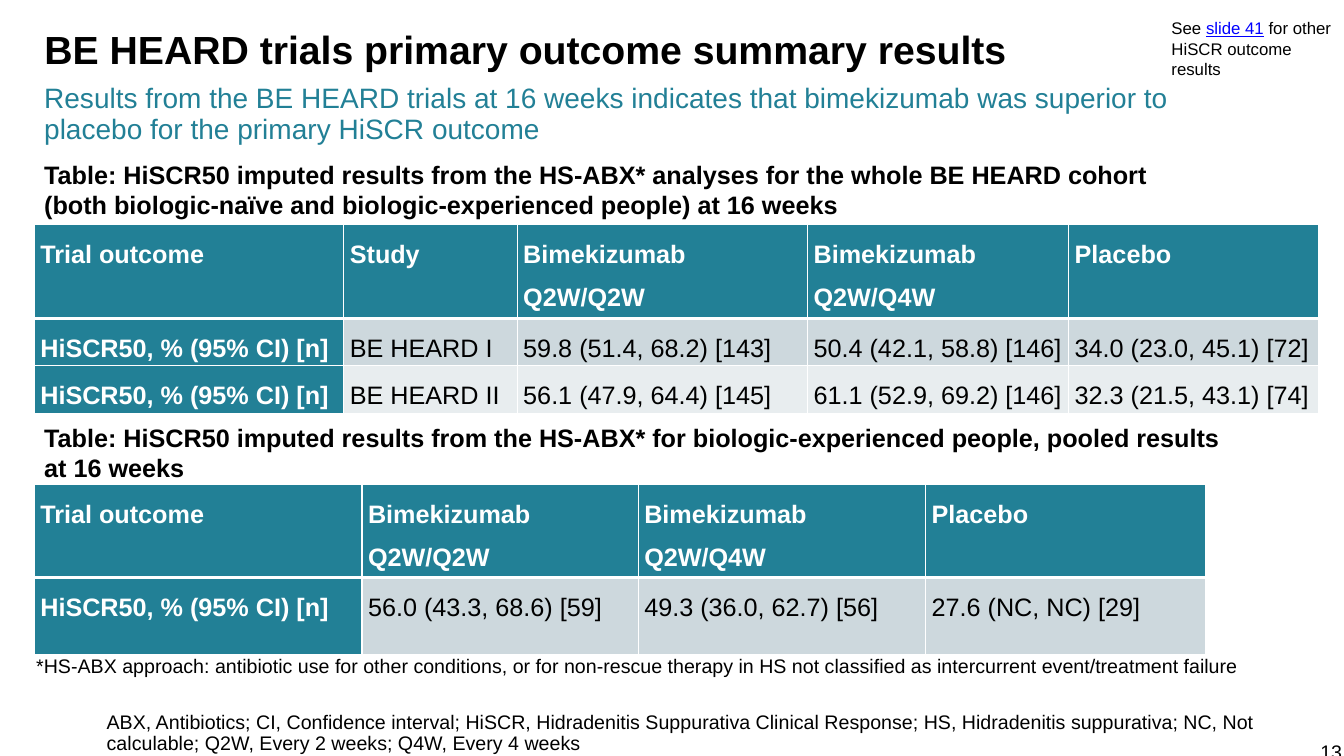
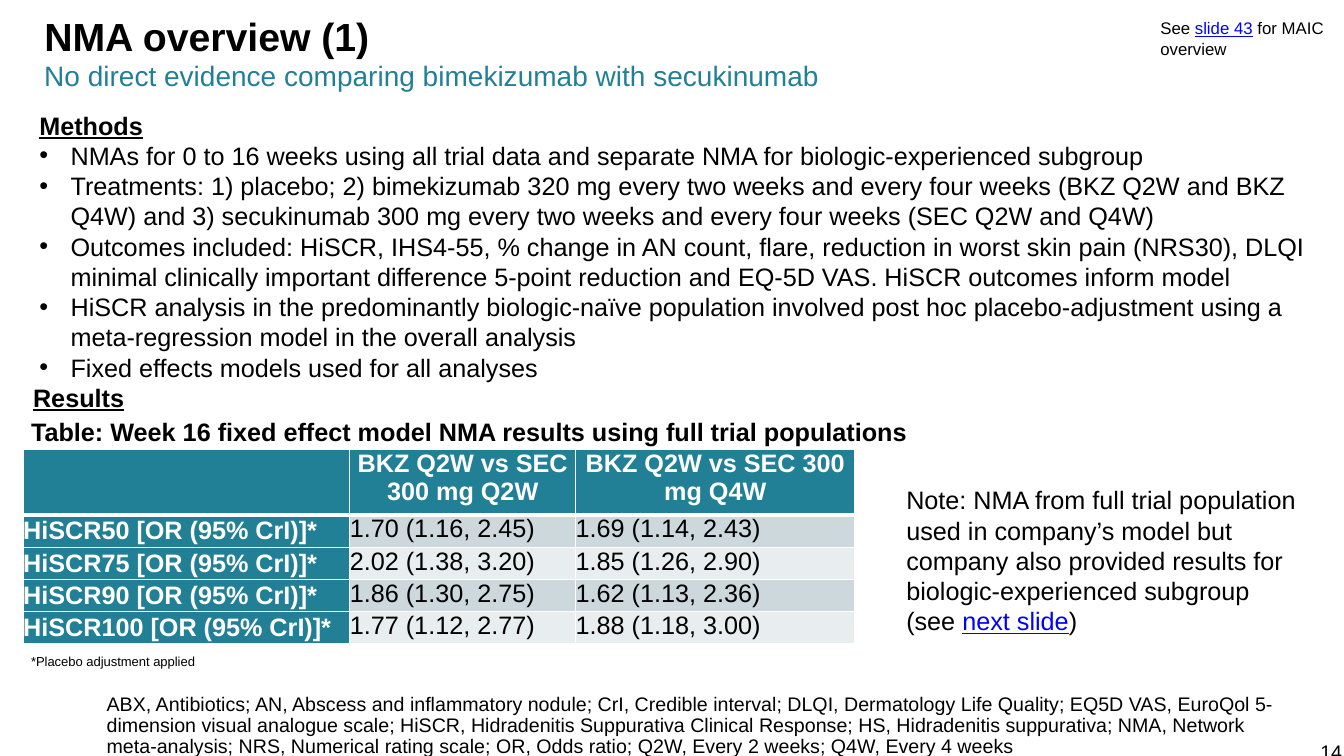
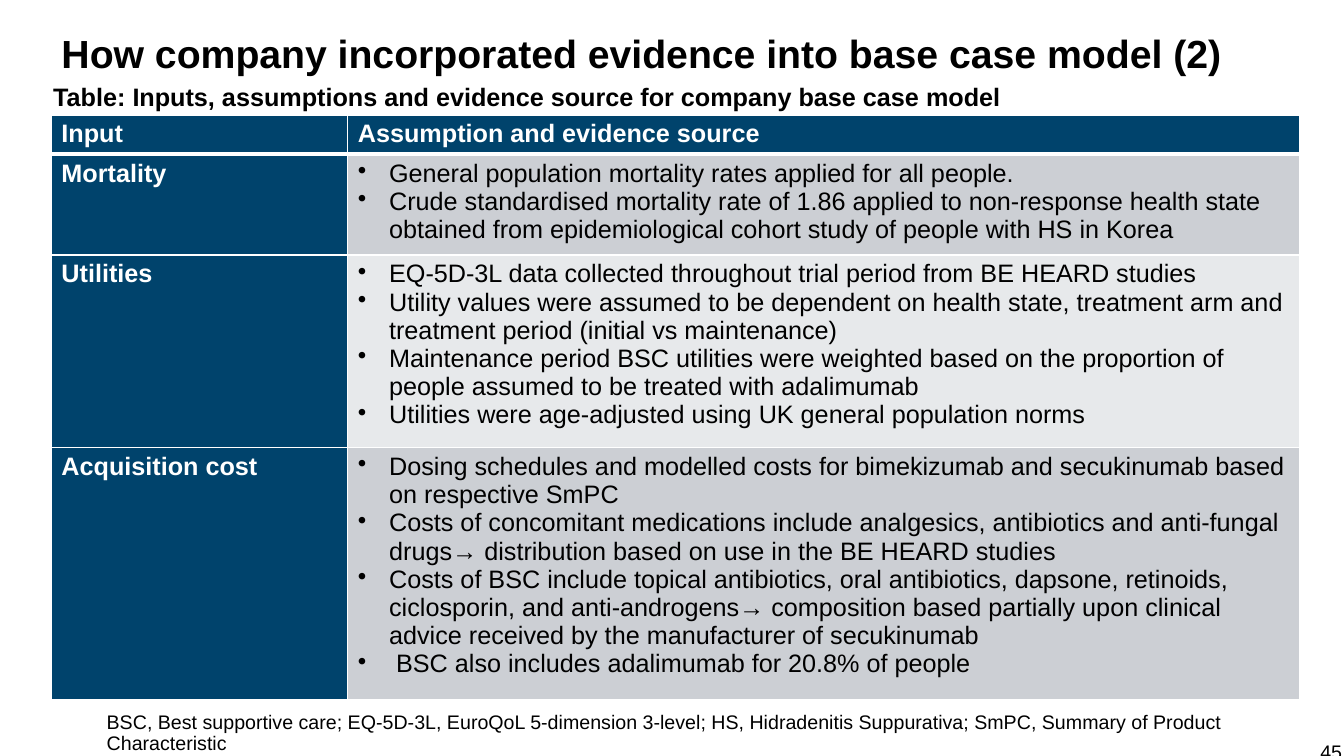
from lxml import etree
from pptx import Presentation, util as u
from pptx.dml.color import RGBColor
from pptx.enum import text
from pptx.oxml.ns import qn

TEAL, NAVY, WHITE, BLACK, LINK = "228096", "00436C", "FFFFFF", "000000", "0000FF"
TEAL_BANDS = ("CDD8DD", "E8EDEF")
NAVY_BANDS = ("CCCFD4", "E7E9EB")
BASE = dict(name="Arial", size=u.Pt(18), bold=False, underline=False, color=BLACK)
LINKED = dict(color=LINK, underline=True)
HEADING = dict(bold=True, underline=True)
INDENT = u.Inches(0.31)
FOOTNOTE = dict(line_spacing=0.9, size=u.Pt(14))
LEFT = 0.34


def rgb(color):
    return RGBColor.from_string(color)


def style(font, fmt):
    for key, value in fmt.items():
        if key == "color":
            font.color.rgb = rgb(value)
        else:
            setattr(font, key, value)


def set_bullet(p, on):
    pPr = p._p.get_or_add_pPr()
    pPr.set("marL", str(INDENT if on else 0))
    pPr.set("indent", str(-INDENT if on else 0))
    if on:
        etree.SubElement(pPr, qn("a:buChar")).set("char", "•")
    else:
        etree.SubElement(pPr, qn("a:buNone"))


def write(tf, paras, bullets_from=None, align=text.PP_ALIGN.LEFT,
          line_spacing=1.0, space_after=0, **fmt):
    """Fill a frame; a paragraph is a string or a list of strings and (string, format) pairs."""
    for i, parts in enumerate(paras):
        p = tf.paragraphs[0] if i == 0 else tf.add_paragraph()
        p.alignment, p.line_spacing = align, line_spacing
        p.space_before, p.space_after = u.Pt(0), u.Pt(space_after)
        set_bullet(p, bullets_from is not None and i >= bullets_from)
        for part in [parts] if isinstance(parts, str) else parts:
            words, extra = (part, {}) if isinstance(part, str) else part
            r = p.add_run()
            r.text = words
            style(r.font, {**BASE, **fmt, **extra})


def place(sp, box, paras, anchor=text.MSO_ANCHOR.TOP, **fmt):
    sp.left, sp.top, sp.width, sp.height = map(u.Inches, box)
    tf = sp.text_frame
    tf.word_wrap, tf.auto_size = True, text.MSO_AUTO_SIZE.NONE
    tf.vertical_anchor = anchor
    write(tf, paras, **fmt)
    return sp


def add_text(s, box, *paras, **fmt):
    return place(s.shapes.add_textbox(0, 0, 0, 0), box, paras, **fmt)


def add_slide(prs, layout, title, title_box, number, footnote, footnote_top=7.02):
    """Slide with the shared title, page number and abbreviations line."""
    s = prs.slides.add_slide(prs.slide_layouts[layout])
    place(s.shapes.title, title_box, [title], line_spacing=0.9, size=u.Pt(28), bold=True)
    add_text(s, (12.9, 7.26, 0.51, 0.4), number, size=u.Pt(14),
             align=text.PP_ALIGN.RIGHT, anchor=text.MSO_ANCHOR.MIDDLE)
    add_text(s, (0.96, footnote_top, 11.86, 7.5 - footnote_top), footnote, **FOOTNOTE)
    return s


def add_subtitle(s, top, words):
    add_text(s, (LEFT, top, 12.3, 0.65), words, line_spacing=0.9, size=u.Pt(20), color=TEAL)


def add_see_note(s, left, target, rest):
    add_text(s, (left, 0.13, 1.88, 0.71), ["See ", (target, LINKED), rest], size=u.Pt(12))


def add_border(cell, side, width):
    ln = etree.SubElement(cell._tc.get_or_add_tcPr(), qn("a:ln" + side))
    ln.set("w", str(u.Pt(width)))
    fill = etree.SubElement(ln, qn("a:solidFill"))
    etree.SubElement(fill, qn("a:srgbClr")).set("val", WHITE)


def add_table(s, left, top, widths, heights, rows, dark=TEAL, bands=TEAL_BANDS,
              inset=(0.06, 0.02), head_align=text.PP_ALIGN.LEFT, label_anchor=text.MSO_ANCHOR.TOP,
              bulleted=False, **fmt):
    """Table with a dark header row and label column; a list in a cell holds its paragraphs."""
    box = map(u.Inches, (left, top, sum(widths), sum(heights)))
    table = s.shapes.add_table(len(rows), len(widths), *box).table
    table.horz_banding = False
    for column, width in zip(table.columns, widths):
        column.width = u.Inches(width)
    for i, (row, height) in enumerate(zip(rows, heights)):
        table.rows[i].height = u.Inches(height)
        for j, value in enumerate(row):
            cell = table.cell(i, j)
            cell.margin_left = cell.margin_right = u.Inches(inset[0])
            cell.margin_top = cell.margin_bottom = u.Inches(inset[1])
            for side in "LRTB":
                add_border(cell, side, 3 if (i, side) in ((0, "B"), (1, "T")) else 1)
            is_dark = i == 0 or j == 0
            cell.fill.solid()
            cell.fill.fore_color.rgb = rgb(dark if is_dark else bands[(i - 1) % 2])
            if i and j == 0:
                cell.vertical_anchor = label_anchor
            write(cell.text_frame, value if isinstance(value, list) else [value],
                  bullets_from=0 if bulleted and not is_dark else None,
                  align=head_align if i == 0 else text.PP_ALIGN.LEFT,
                  bold=is_dark, color=WHITE if is_dark else BLACK, **fmt)


def trial_results(prs):
    s = add_slide(
        prs, 5, "BE HEARD trials primary outcome summary results", (LEFT, 0.25, 12.3, 0.65), "13",
        "ABX, Antibiotics; CI, Confidence interval; HiSCR, Hidradenitis Suppurativa Clinical "
        "Response; HS, Hidradenitis suppurativa; NC, Not calculable; Q2W, Every 2 weeks; "
        "Q4W, Every 4 weeks")
    add_subtitle(s, 0.79, "Results from the BE HEARD trials at 16 weeks indicates that bimekizumab "
                 "was superior to placebo for the primary HiSCR outcome")
    add_see_note(s, 11.52, "slide 41", " for other HiSCR outcome results")
    arms = ["Bimekizumab Q2W/Q2W", "Bimekizumab Q2W/Q4W", "Placebo"]
    outcome = "HiSCR50, % (95% CI) [n]"
    add_text(s, (LEFT, 1.53, 11.18, 0.71),
             "Table: HiSCR50 imputed results from the HS-ABX* analyses for the whole BE HEARD "
             "cohort (both biologic-naïve and biologic-experienced people) at 16 weeks", bold=True)
    add_table(s, LEFT, 2.23, (3.07, 1.72, 2.88, 2.59, 2.48), (0.93, 0.47, 0.47), [
        ["Trial outcome", "Study", *arms],
        [outcome, "BE HEARD I", "59.8 (51.4, 68.2) [143]", "50.4 (42.1, 58.8) [146]",
         "34.0 (23.0, 45.1) [72]"],
        [outcome, "BE HEARD II", "56.1 (47.9, 64.4) [145]", "61.1 (52.9, 69.2) [146]",
         "32.3 (21.5, 43.1) [74]"],
    ], line_spacing=1.5)
    add_text(s, (LEFT, 4.14, 11.87, 0.71),
             "Table: HiSCR50 imputed results from the HS-ABX* for biologic-experienced people, "
             "pooled results at 16 weeks", bold=True)
    add_table(s, LEFT, 4.81, (3.25, 2.74, 2.85, 2.78), (0.92, 0.76), [
        ["Trial outcome", *arms],
        [outcome, "56.0 (43.3, 68.6) [59]", "49.3 (36.0, 62.7) [56]", "27.6 (NC, NC) [29]"],
    ], line_spacing=1.5)
    add_text(s, (0.26, 6.46, 12.21, 0.41),
             "*HS-ABX approach: antibiotic use for other conditions, or for non-rescue therapy in "
             "HS not classified as intercurrent event/treatment failure", **FOOTNOTE)


def nma_overview(prs):
    s = add_slide(
        prs, 1, "NMA overview (1)", (LEFT, 0.12, 12.3, 0.65), "14",
        "ABX, Antibiotics; AN, Abscess and inflammatory nodule; CrI, Credible interval; DLQI, "
        "Dermatology Life Quality; EQ5D VAS, EuroQol 5-dimension visual analogue scale; HiSCR, "
        "Hidradenitis Suppurativa Clinical Response; HS, Hidradenitis suppurativa; NMA, Network "
        "meta-analysis; NRS, Numerical rating scale; OR, Odds ratio; Q2W, Every 2 weeks; Q4W, "
        "Every 4 weeks", footnote_top=6.84)
    add_subtitle(s, 0.57, "No direct evidence comparing bimekizumab with secukinumab")
    add_see_note(s, 11.41, "slide 43", " for MAIC overview")
    place(s.placeholders[1], (0.29, 1.04, 12.76, 2.83), [
        [("Methods", HEADING)],
        "NMAs for 0 to 16 weeks using all trial data and separate NMA for biologic-experienced "
        "subgroup",
        "Treatments: 1) placebo; 2) bimekizumab 320 mg every two weeks and every four weeks (BKZ "
        "Q2W and BKZ Q4W) and 3) secukinumab 300 mg every two weeks and every four weeks (SEC Q2W "
        "and Q4W)",
        "Outcomes included: HiSCR, IHS4-55, % change in AN count, flare, reduction in worst skin "
        "pain (NRS30), DLQI minimal clinically important difference 5-point reduction and EQ-5D "
        "VAS. HiSCR outcomes inform model",
        "HiSCR analysis in the predominantly biologic-naïve population involved post hoc "
        "placebo-adjustment using a meta-regression model in the overall analysis",
        "Fixed effects models used for all analyses",
    ], bullets_from=1)
    add_text(s, (0.23, 3.74, 3.73, 0.4), "Results", **HEADING)
    add_text(s, (0.21, 4.08, 11.18, 0.4),
             "Table: Week 16 fixed effect model NMA results using full trial populations",
             bold=True)
    odds_ratios = {
        50: ("1.70 (1.16, 2.45)", "1.69 (1.14, 2.43)"),
        75: ("2.02 (1.38, 3.20)", "1.85 (1.26, 2.90)"),
        90: ("1.86 (1.30, 2.75)", "1.62 (1.13, 2.36)"),
        100: ("1.77 (1.12, 2.77)", "1.88 (1.18, 3.00)"),
    }
    add_table(s, 0.23, 4.46, (3.24, 2.24, 2.77), (0.65, *[0.32] * 4), [
        ["", "BKZ Q2W vs SEC 300 mg Q2W", "BKZ Q2W vs SEC 300 mg Q4W"],
        *[[f"HiSCR{level} [OR (95% CrI)]*", *values] for level, values in odds_ratios.items()],
    ], inset=(0, 0), head_align=text.PP_ALIGN.CENTER, label_anchor=text.MSO_ANCHOR.MIDDLE,
        space_after=2)
    note = add_text(s, (0.21, 6.41, 4.26, 0.37), "*Placebo adjustment applied", size=u.Pt(16))
    note.text_frame.paragraphs[0].runs[0]._r.get_or_add_rPr().set("baseline", "30000")
    add_text(s, (8.89, 4.76, 4.15, 1.62), [
        "Note: NMA from full trial population used in company’s model but company also provided "
        "results for biologic-experienced subgroup (see ", ("next slide", LINKED), ")"])


def base_case_evidence(prs):
    s = add_slide(
        prs, 5, "How company incorporated evidence into base case model (2)",
        (0.51, 0.29, 12.82, 0.65), "45",
        "BSC, Best supportive care; EQ-5D-3L, EuroQoL 5-dimension 3-level; HS, Hidradenitis "
        "Suppurativa; SmPC, Summary of Product Characteristic")
    add_text(s, (0.43, 0.76, 10, 0.4),
             "Table: Inputs, assumptions and evidence source for company base case model",
             bold=True)
    add_table(s, 0.51, 1.14, (2.94, 9.44), (0.39, 1, 1.91, 2.5), [
        ["Input", "Assumption and evidence source"],
        ["Mortality", [
            "General population mortality rates applied for all people.",
            "Crude standardised mortality rate of 1.86 applied to non-response health state "
            "obtained from epidemiological cohort study of people with HS in Korea"]],
        ["Utilities", [
            "EQ-5D-3L data collected throughout trial period from BE HEARD studies",
            "Utility values were assumed to be dependent on health state, treatment arm and "
            "treatment period (initial vs maintenance)",
            "Maintenance period BSC utilities were weighted based on the proportion of people "
            "assumed to be treated with adalimumab",
            "Utilities were age-adjusted using UK general population norms"]],
        ["Acquisition cost", [
            "Dosing schedules and modelled costs for bimekizumab and secukinumab based on "
            "respective SmPC",
            "Costs of concomitant medications include analgesics, antibiotics and anti-fungal "
            "drugs→ distribution based on use in the BE HEARD studies",
            "Costs of BSC include topical antibiotics, oral antibiotics, dapsone, retinoids, "
            "ciclosporin, and anti-androgens→ composition based partially upon clinical advice "
            "received by the manufacturer of secukinumab",
            " BSC also includes adalimumab for 20.8% of people"]],
    ], dark=NAVY, bands=NAVY_BANDS, inset=(0.1, 0.05), bulleted=True)


def main():
    prs = Presentation()
    prs.slide_width, prs.slide_height = u.Inches(13.33), u.Inches(7.5)
    for build in (trial_results, nma_overview, base_case_evidence):
        build(prs)
    prs.save("out.pptx")


if __name__ == "__main__":
    main()
